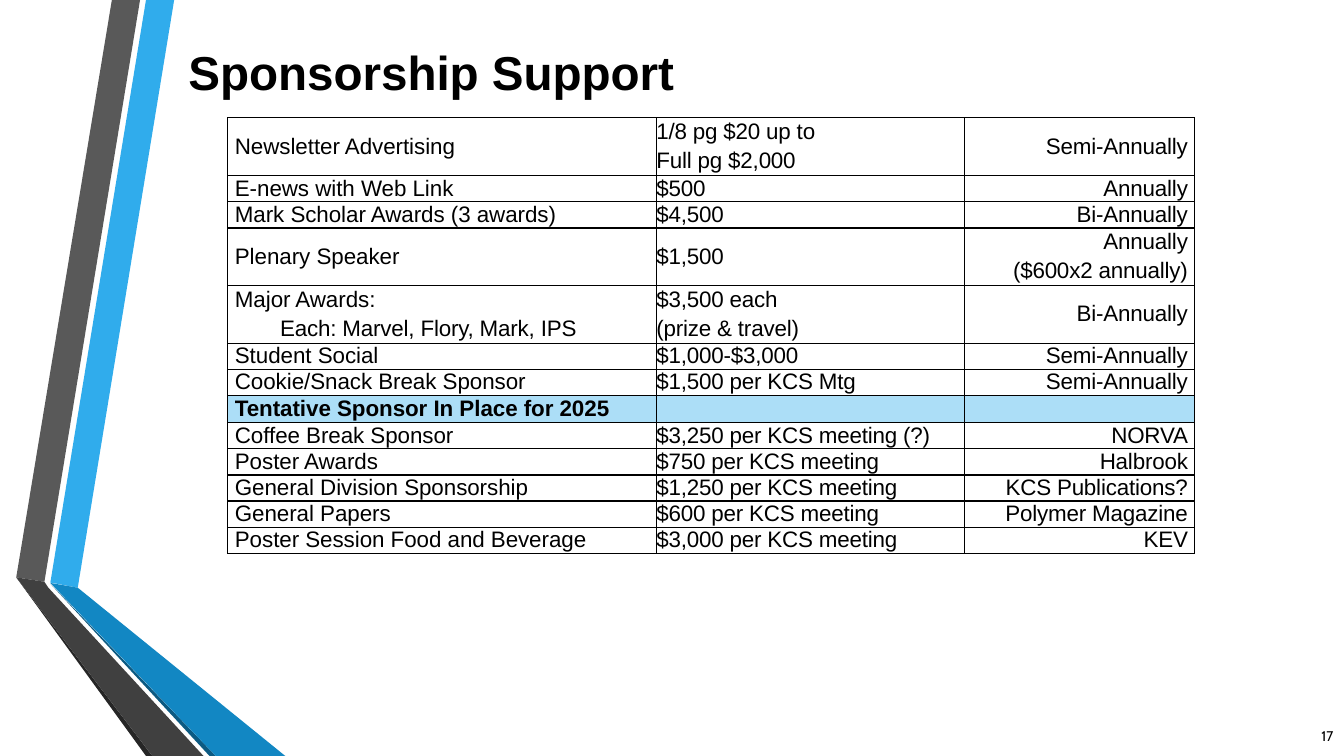
import lxml.etree
import pptx
import pptx.dml.color
import pptx.enum.text
import pptx.oxml.ns
import pptx.util

Cm = pptx.util.Cm
Pt = pptx.util.Pt
Align = pptx.enum.text.PP_ALIGN
Anchor = pptx.enum.text.MSO_ANCHOR
qn = pptx.oxml.ns.qn

COLORS = {
    "black": "000000",
    "highlight": "ACDEF7",
    "blue": "30ACEC",
    "blue_fold": "1287C3",
    "blue_edge": "0C5A82",
    "gray": "595959",
    "gray_fold": "404040",
    "gray_edge": "262626",
}

RIBBONS = [
    ("blue", [(1.27, 14.68), (1.96, 14.81), (4.39, 0), (3.68, 0)]),
    ("gray", [(3.53, 0), (2.82, 0), (0.41, 14.55), (1.12, 14.66)]),
    ("gray_edge", [(0.41, 14.55), (3.68, 19.05), (3.84, 19.05)]),
    ("blue_edge", [(1.27, 14.71), (5.28, 19.05), (5.44, 19.05)]),
    ("blue_fold", [(1.27, 14.69), (5.44, 19.05), (7.19, 19.05), (1.96, 14.81)]),
    ("gray_fold", [(5.13, 19.05), (1.22, 14.81), (1.12, 14.66), (0.41, 14.55), (3.84, 19.05)]),
]

SPONSORSHIPS = [
    ("Newsletter Advertising", "1/8 pg $20 up to\nFull pg $2,000", "Semi-Annually"),
    ("E-news with Web Link", "$500", "Annually"),
    ("Mark Scholar Awards (3 awards)", "$4,500", "Bi-Annually"),
    ("Plenary Speaker", "$1,500", "Annually\n($600x2 annually)"),
    ("Major Awards:\nEach: Marvel, Flory, Mark, IPS", "$3,500 each\n(prize & travel)", "Bi-Annually"),
    ("Student Social", "$1,000-$3,000", "Semi-Annually"),
    ("Cookie/Snack Break Sponsor", "$1,500 per KCS Mtg", "Semi-Annually"),
    ("Tentative Sponsor In Place for 2025", "", ""),
    ("Coffee Break Sponsor", "$3,250 per KCS meeting (?)", "NORVA"),
    ("Poster Awards", "$750 per KCS meeting", "Halbrook"),
    ("General Division Sponsorship", "$1,250 per KCS meeting", "KCS Publications?"),
    ("General Papers", "$600 per KCS meeting", "Polymer Magazine"),
    ("Poster Session Food and Beverage", "$3,000 per KCS meeting", "KEV"),
]
COLUMN_WIDTHS = [10.8, 7.77, 5.79]
COLUMN_ALIGNMENTS = [Align.LEFT, Align.LEFT, Align.RIGHT]
MINIMUM_ROW_HEIGHT = 0.25


def color(name):
    return pptx.dml.color.RGBColor.from_string(COLORS[name])


def style_font(font, name, size, bold=False):
    font.name = name
    font.size = Pt(size)
    font.bold = bold
    font.color.rgb = color("black")


def add_ribbons(slide, left, top):
    for fill, outline in RIBBONS:
        points = [(Cm(x), Cm(y)) for x, y in outline]
        builder = slide.shapes.build_freeform(*points[0])
        builder.add_line_segments(points[1:])
        shape = builder.convert_to_shape(Cm(left), Cm(top))
        shape.shadow.inherit = False
        shape.fill.solid()
        shape.fill.fore_color.rgb = color(fill)
        shape.line.fill.background()


def add_label(slide, left, top, width, height, text, font_name, size,
              bold=False, alignment=Align.LEFT, anchor=Anchor.TOP):
    shape = slide.shapes.add_textbox(Cm(left), Cm(top), Cm(width), Cm(height))
    shape.text_frame.word_wrap = True
    shape.text_frame.vertical_anchor = anchor
    paragraph = shape.text_frame.paragraphs[0]
    paragraph.text = text
    paragraph.alignment = alignment
    style_font(paragraph.font, font_name, size, bold)


def set_borders(cell):
    properties = cell._tc.get_or_add_tcPr()
    for index, side in enumerate(("lnL", "lnR", "lnT", "lnB")):
        line = lxml.etree.Element(qn("a:" + side), w=str(Pt(1)))
        fill = lxml.etree.SubElement(line, qn("a:solidFill"))
        lxml.etree.SubElement(fill, qn("a:srgbClr"), val=COLORS["black"])
        properties.insert(index, line)


def fill_cell(cell, text, column, highlighted):
    cell.margin_left = cell.margin_top = cell.margin_bottom = 0
    cell.margin_right = Cm(0.16) if column == 2 else 0
    cell.vertical_anchor = Anchor.MIDDLE
    if highlighted:
        cell.fill.solid()
        cell.fill.fore_color.rgb = color("highlight")
    else:
        cell.fill.background()
    set_borders(cell)
    cell.text = text
    for index, paragraph in enumerate(cell.text_frame.paragraphs):
        paragraph.alignment = COLUMN_ALIGNMENTS[column]
        paragraph.line_spacing = 0.97
        paragraph.space_before = paragraph.space_after = Pt(2)
        style_font(paragraph.font, "Arial", 16, highlighted)
        properties = paragraph._p.get_or_add_pPr()
        spacing = "-2" if column == 0 and index == 0 else "-10"
        properties.find(qn("a:defRPr")).set("spc", spacing)
        if column == 0:
            properties.set("marL", str(Cm(1.32 if index else 0.18)))
        if not text:
            lxml.etree.SubElement(paragraph._p, qn("a:endParaRPr"), sz="1600")


def add_sponsorship_table(slide, left, top, height):
    frame = slide.shapes.add_table(
        len(SPONSORSHIPS), len(COLUMN_WIDTHS), Cm(left), Cm(top),
        Cm(sum(COLUMN_WIDTHS)), Cm(height))
    table = frame.table
    table.first_row = False
    table.horz_banding = False
    for column, width in zip(table.columns, COLUMN_WIDTHS):
        column.width = Cm(width)
    for row_index, texts in enumerate(SPONSORSHIPS):
        table.rows[row_index].height = Cm(MINIMUM_ROW_HEIGHT)
        highlighted = texts[0].startswith("Tentative")
        for column, text in enumerate(texts):
            fill_cell(table.cell(row_index, column), text, column, highlighted)
    frame.height = Cm(height)


def main():
    presentation = pptx.Presentation()
    presentation.slide_width = Cm(33.87)
    presentation.slide_height = Cm(19.05)
    slide = presentation.slides.add_slide(presentation.slide_layouts[6])
    add_ribbons(slide, 0, 0)
    add_label(slide, 4.5, 0.96, 20.75, 1.45, "Sponsorship Support", "Arial", 34, bold=True)
    add_label(slide, 32.33, 18.03, 1.52, 1.02, "17", "Cabin", 10,
              alignment=Align.RIGHT, anchor=Anchor.MIDDLE)
    add_sponsorship_table(slide, 5.74, 2.97, 11.25)
    presentation.save("out.pptx")


if __name__ == "__main__":
    main()
